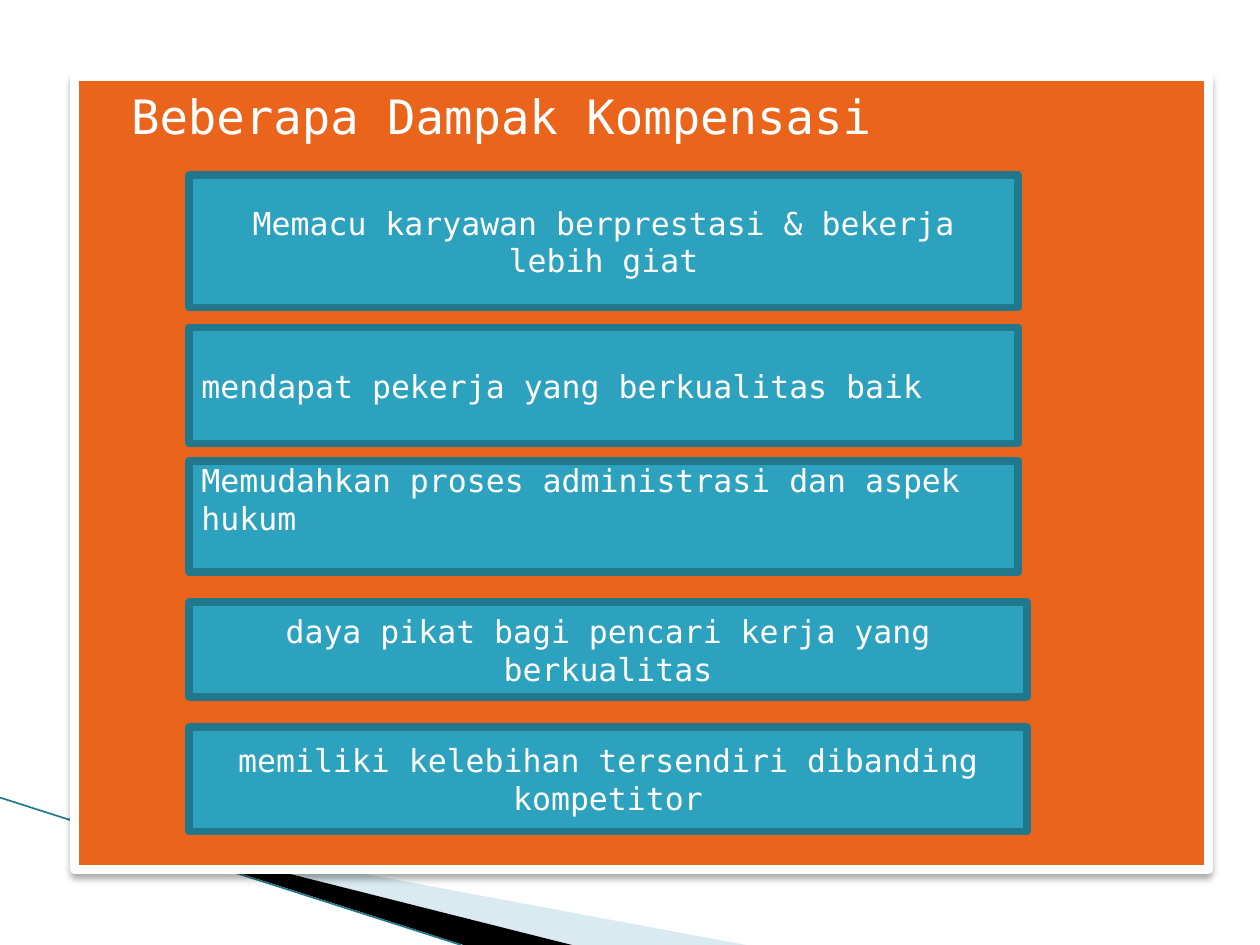
"""Build the slide on the effects of compensation."""
from lxml import etree
from pptx import Presentation
from pptx.dml.color import RGBColor
from pptx.enum.shapes import MSO_CONNECTOR as LINK, MSO_SHAPE as SHAPE
from pptx.enum.text import MSO_ANCHOR as ANCHOR, MSO_AUTO_SIZE as FIT, PP_ALIGN as ALIGN
from pptx.oxml import parse_xml
from pptx.oxml.ns import nsdecls, qn
from pptx.util import Inches, Pt

FONT = "DejaVu Sans Mono"
HUES = {"white": "FFFFFF", "orange": "EB641B", "teal": "2DA2BF",
        "edge": "21788D", "pale": "A0CBDC", "black": "000000"}


def paint(shape, fill, edge=None, width=0):
    shape.fill.solid()
    shape.fill.fore_color.rgb = RGBColor.from_string(HUES[fill])
    if edge:
        shape.line.color.rgb = RGBColor.from_string(HUES[edge])
        shape.line.width = Pt(width)
    else:
        shape.line.fill.background()


def write(shape, text, size, align, anchor):
    frame = shape.text_frame
    frame.word_wrap = True
    frame.auto_size = FIT.NONE
    frame.vertical_anchor = anchor
    para = frame.paragraphs[0]
    para.alignment = align
    run = para.add_run()
    run.text = text
    run.font.name = FONT
    run.font.size = Pt(size)
    run.font.color.rgb = RGBColor.from_string(HUES["white"])


deck = Presentation()
deck.slide_width, deck.slide_height = Inches(10), Inches(7.5)
slide = deck.slides.add_slide(deck.slide_layouts[5])
shapes = slide.shapes

wedges = [
    ("pale", [(0.55, 6.5), (5.92, 7.5), (4.54, 7.5)]),
    ("black", [(0.53, 6.49), (4.54, 7.5), (3.68, 7.5)]),
]
for hue, spots in wedges:
    points = [(Inches(x), Inches(y)) for x, y in spots]
    pen = shapes.build_freeform(*points[0])
    pen.add_line_segments(points[1:], close=True)
    wedge = pen.convert_to_shape()
    wedge.shadow.inherit = False
    paint(wedge, hue)
    if hue == "pale":
        tint = wedge.fill._xPr.find(".//" + qn("a:srgbClr"))
        etree.SubElement(tint, qn("a:alpha"), val="40000")

line = shapes.add_connector(LINK.STRAIGHT, Inches(0), Inches(6.33), Inches(3.66), Inches(7.5))
line.line.color.rgb = RGBColor.from_string(HUES["edge"])
line.line.width = Pt(0.95)
etree.SubElement(line._element.spPr, qn("a:effectLst"))

title = shapes.title
title.left, title.top, title.width, title.height = map(Inches, (0.59, 0.61, 9, 6.29))
paint(title, "orange", "white", 5)
title._element.spPr.append(parse_xml(
    f'<a:effectLst {nsdecls("a")}><a:outerShdw blurRad="50800" dist="38100" dir="5400000">'
    '<a:srgbClr val="000000"><a:alpha val="35000"/></a:srgbClr></a:outerShdw></a:effectLst>'))
write(title, "Beberapa Dampak Kompensasi", 27, ALIGN.LEFT, ANCHOR.TOP)
title.text_frame.margin_left = Inches(0.45)
title.text_frame.margin_top = Inches(0.08)
shapes._spTree.append(title._element)

boxes = [
    (1.39, 6.58, 1.05, "Memacu karyawan berprestasi & bekerja lebih giat", ALIGN.CENTER, ANCHOR.MIDDLE),
    (2.6, 6.58, 0.92, "mendapat pekerja yang berkualitas baik", ALIGN.LEFT, ANCHOR.MIDDLE),
    (3.66, 6.58, 0.88, "Memudahkan proses administrasi dan aspek hukum", ALIGN.LEFT, ANCHOR.TOP),
    (4.78, 6.65, 0.75, "daya pikat bagi pencari kerja yang berkualitas", ALIGN.CENTER, ANCHOR.MIDDLE),
    (5.77, 6.65, 0.83, "memiliki kelebihan tersendiri dibanding kompetitor", ALIGN.CENTER, ANCHOR.MIDDLE),
]
for top, width, height, text, align, anchor in boxes:
    box = shapes.add_shape(SHAPE.RECTANGLE, Inches(1.5), Inches(top), Inches(width), Inches(height))
    box.shadow.inherit = False
    paint(box, "teal", "edge", 4.33)
    write(box, text, 18, align, anchor)
    if anchor == ANCHOR.TOP:
        box.text_frame.margin_top = 0

deck.save("out.pptx")
